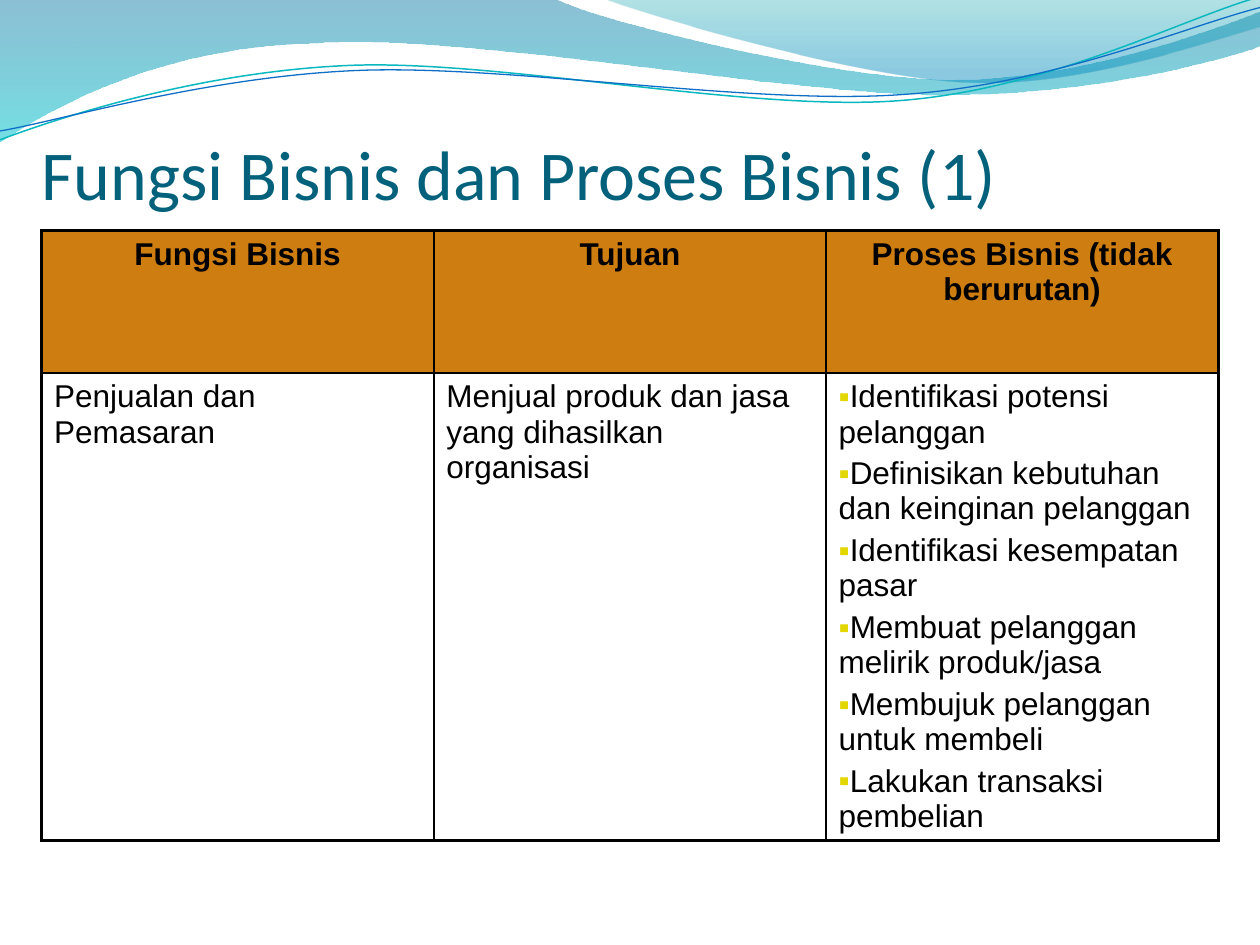
from dataclasses import dataclass

from lxml import etree
from pptx import Presentation
from pptx import util as u
from pptx.dml.color import RGBColor
from pptx.enum import text
from pptx.oxml import ns

TITLE = "Fungsi Bisnis dan Proses Bisnis (1)"
HEADINGS = ["Fungsi Bisnis", "Tujuan", "Proses Bisnis (tidak berurutan)"]
FUNCTION = ["Penjualan dan Pemasaran"]
GOAL = ["Menjual produk dan jasa yang dihasilkan organisasi"]
PROCESSES = [
    "Identifikasi potensi pelanggan",
    "Definisikan kebutuhan dan keinginan pelanggan",
    "Identifikasi kesempatan pasar",
    "Membuat pelanggan melirik produk/jasa",
    "Membujuk pelanggan untuk membeli",
    "Lakukan transaksi pembelian",
]
ROWS = [[[heading] for heading in HEADINGS], [FUNCTION, GOAL, PROCESSES]]
ROW_HEIGHTS = [1.13, 2.42]

BANDS = [
    ([[(0, 0)], [(4.4, -0.01)],
      [(4.76, 0.17), (6.64, 0.63), (7.58, 0.63)],
      [(8.53, 0.63), (9.58, 0.26), (10, 0.09)], [(10.01, 0.36)],
      [(9.83, 0.44), (8.7, 0.76), (7.46, 0.75)],
      [(6.22, 0.75), (3.82, 0.28), (2.57, 0.34)],
      [(1.29, 0.36), (0.46, 0.83), (-0.01, 1.13)], [(0, 0)]],
     [(0, "0074A1", 45), (1, "00C6CF", 55)]),
    ([[(4.79, -0.01)],
      [(5.09, 0.11), (6.82, 0.62), (7.69, 0.65)],
      [(8.56, 0.69), (9.61, 0.32), (10, 0.21)], [(10, 0)], [(4.79, -0.01)]],
     [(0, "00A1A9", 30), (0.8, "008BBF", 45)]),
]
RIPPLES = [
    ([[(0, 1.11)],
      [(0.48, 0.93), (1.58, 0.57), (2.77, 0.52)],
      [(3.95, 0.47), (5.93, 0.89), (7.13, 0.8)],
      [(8.33, 0.71), (9.38, 0.15), (9.98, -0.02)]], "0AB8BF", 0.85),
    ([[(0, 1.04)],
      [(0.47, 0.96), (1.64, 0.61), (2.83, 0.56)],
      [(4.03, 0.51), (5.97, 0.84), (7.17, 0.75)],
      [(8.36, 0.67), (9.41, 0.21), (10, 0.06)]], "0F6FC6", 0.75),
]


@dataclass(frozen=True)
class Theme:
    title: str = "04617B"
    ink: str = "000000"
    header: str = "CE7D10"
    bullet: str = "E2D700"
    title_font: str = "Calibri"
    body_font: str = "Arial"
    title_size: float = 40
    body_size: float = 18
    outer_line: float = 2.25
    inner_line: float = 1
    margin: float = 0.33


THEME = Theme()


def rgb(value):
    return RGBColor.from_string(value)


def add_xml(parent, tag, **attributes):
    return etree.SubElement(parent, ns.qn(tag), attributes)


def style(run, font, size, color, bold=False):
    run.font.name, run.font.size, run.font.bold = font, u.Pt(size), bold
    run.font.color.rgb = rgb(color)


def bend(wave, segments):
    steps = iter(list(wave._element.iter(ns.qn("a:lnTo"))))
    for segment in segments:
        group = [next(steps) for _ in segment]
        if len(group) == 3:
            curve = etree.Element(ns.qn("a:cubicBezTo"))
            group[0].addprevious(curve)
            for step in group:
                curve.append(step[0])
                step.getparent().remove(step)


def draw(slide, segments, close):
    start, *rest = [(u.Inches(x), u.Inches(y)) for segment in segments for x, y in segment]
    builder = slide.shapes.build_freeform(*start)
    builder.add_line_segments(rest, close=close)
    wave = builder.convert_to_shape()
    bend(wave, segments[1:])
    wave.shadow.inherit = False
    slide.shapes.title._element.addprevious(wave._element)
    return wave


def add_waves(slide):
    for segments, stops in BANDS:
        band = draw(slide, segments, True)
        band.line.fill.background()
        band.fill.gradient()
        band.fill.gradient_angle = 270
        for stop, (position, color, _) in zip(band.fill.gradient_stops, stops):
            stop.position = position
            stop.color.rgb = rgb(color)
        for color_node, (_, _, opacity) in zip(band._element.spPr.iter(ns.qn("a:srgbClr")), stops):
            add_xml(color_node, "a:alpha", val=str(opacity * 1000))
    for segments, color, width in RIPPLES:
        ripple = draw(slide, segments, False)
        ripple.fill.background()
        ripple.line.color.rgb = rgb(color)
        ripple.line.width = u.Pt(width)


def add_title(slide, width):
    title = slide.shapes.title
    title.left, title.top = u.Inches(THEME.margin), u.Inches(0.25)
    title.width, title.height = u.Inches(width), u.Inches(1.45)
    frame = title.text_frame
    frame.text = TITLE
    frame.word_wrap = True
    frame.auto_size = text.MSO_AUTO_SIZE.NONE
    frame.vertical_anchor = text.MSO_ANCHOR.BOTTOM
    frame.margin_left = frame.margin_right = frame.margin_bottom = 0
    frame.paragraphs[0].alignment = text.PP_ALIGN.LEFT
    style(frame.paragraphs[0].runs[0], THEME.title_font, THEME.title_size, THEME.title)


def set_borders(cell, outer_sides):
    properties = cell._tc.get_or_add_tcPr()
    for index, (side, outer) in enumerate(zip("LRTB", outer_sides)):
        width = THEME.outer_line if outer else THEME.inner_line
        border = add_xml(properties, f"a:ln{side}", w=str(u.Pt(width)))
        add_xml(add_xml(border, "a:solidFill"), "a:srgbClr", val=THEME.ink)
        properties.insert(index, border)


def add_bullet(paragraph):
    properties = paragraph._p.get_or_add_pPr()
    properties.set("marL", "0")
    properties.set("indent", "0")
    add_xml(add_xml(properties, "a:buClr"), "a:srgbClr", val=THEME.bullet)
    add_xml(properties, "a:buFont", typeface=THEME.body_font)
    add_xml(properties, "a:buChar", char="▪")


def fill_cell(cell, lines, header):
    cell.text_frame.text = "\n".join(lines)
    for paragraph in cell.text_frame.paragraphs:
        paragraph.alignment = text.PP_ALIGN.CENTER if header else text.PP_ALIGN.LEFT
        paragraph.space_before = u.Pt(THEME.body_size * 0.2)
        style(paragraph.runs[0], THEME.body_font, THEME.body_size, THEME.ink, header)
        if len(lines) > 1:
            add_bullet(paragraph)
    if header:
        cell.fill.solid()
        cell.fill.fore_color.rgb = rgb(THEME.header)
    else:
        cell.fill.background()


def add_function_table(slide, width):
    last_row, last_column = len(ROWS) - 1, len(HEADINGS) - 1
    table = slide.shapes.add_table(
        len(ROWS), len(HEADINGS), u.Inches(THEME.margin), u.Inches(1.83),
        u.Inches(width), u.Inches(sum(ROW_HEIGHTS))).table
    table.first_row = table.horz_banding = False
    for r, (contents, height) in enumerate(zip(ROWS, ROW_HEIGHTS)):
        table.rows[r].height = u.Inches(height)
        for c, lines in enumerate(contents):
            cell = table.cell(r, c)
            fill_cell(cell, lines, r == 0)
            set_borders(cell, (c == 0, c == last_column, r == 0, r == last_row))


def main():
    deck = Presentation()
    deck.slide_width, deck.slide_height = u.Inches(10), u.Inches(7.5)
    slide = deck.slides.add_slide(deck.slide_layouts[5])
    content_width = 10 - 2 * THEME.margin
    add_waves(slide)
    add_title(slide, content_width)
    add_function_table(slide, content_width)
    deck.save("out.pptx")


if __name__ == "__main__":
    main()
